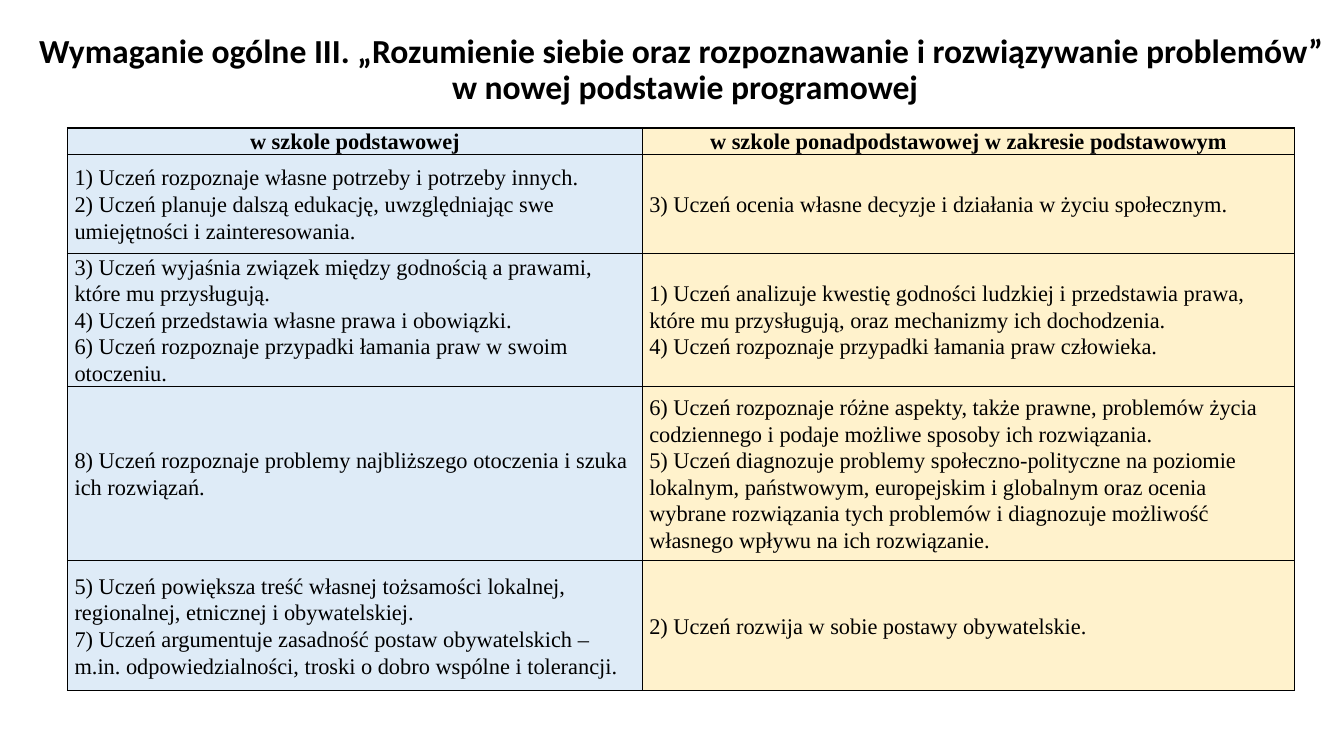
import pptx
import pptx.util
import pptx.dml.color
import pptx.enum.text
import pptx.oxml
import pptx.oxml.ns

Inches, Pt = pptx.util.Inches, pptx.util.Pt
CENTER = pptx.enum.text.PP_ALIGN.CENTER
LEFT = pptx.enum.text.PP_ALIGN.LEFT
MIDDLE = pptx.enum.text.MSO_ANCHOR.MIDDLE

TITLE = (
    "Wymaganie ogólne III. „Rozumienie siebie oraz rozpoznawanie i rozwiązywanie problemów” \v"
    "w nowej podstawie programowej"
)
SCHOOLS = ["w szkole podstawowej", "w szkole ponadpodstawowej w zakresie podstawowym"]
REQUIREMENTS = [
    (
        ["1) Uczeń rozpoznaje własne potrzeby i potrzeby innych.",
         "2) Uczeń planuje dalszą edukację, uwzględniając swe umiejętności i zainteresowania."],
        ["3) Uczeń ocenia własne decyzje i działania w życiu społecznym."],
    ),
    (
        ["3) Uczeń wyjaśnia związek między godnością a prawami, które mu przysługują.",
         "4) Uczeń przedstawia własne prawa i obowiązki.",
         "6) Uczeń rozpoznaje przypadki łamania praw w swoim otoczeniu."],
        ["1) Uczeń analizuje kwestię godności ludzkiej i przedstawia prawa, które mu przysługują, "
         "oraz mechanizmy ich dochodzenia.",
         "4) Uczeń rozpoznaje przypadki łamania praw człowieka."],
    ),
    (
        ["8) Uczeń rozpoznaje problemy najbliższego otoczenia i szuka ich rozwiązań."],
        ["6) Uczeń rozpoznaje różne aspekty, także prawne, problemów życia codziennego "
         "i podaje możliwe sposoby ich rozwiązania.",
         "5) Uczeń diagnozuje problemy społeczno-polityczne na poziomie lokalnym, państwowym, "
         "europejskim i globalnym oraz ocenia wybrane rozwiązania tych problemów "
         "i diagnozuje możliwość własnego wpływu na ich rozwiązanie."],
    ),
    (
        ["5) Uczeń powiększa treść własnej tożsamości lokalnej, regionalnej, etnicznej i obywatelskiej.",
         "7) Uczeń argumentuje zasadność postaw obywatelskich – m.in. odpowiedzialności, "
         "troski o dobro wspólne i tolerancji."],
        ["2) Uczeń rozwija w sobie postawy obywatelskie."],
    ),
]
SCHOOL_FILLS = ["DEEBF7", "FFF2CC"]
SCHOOL_WIDTHS = [5.7, 6.47]
ROW_HEIGHTS = [0.24, 0.98, 1.29, 1.73, 1.29]
BLACK = "000000"


def color(value):
    return pptx.dml.color.RGBColor.from_string(value)


def write(frame, lines, font, size, bold=False, align=LEFT, spacing=1.0):
    frame.word_wrap = True
    for index, line in enumerate(lines):
        paragraph = frame.add_paragraph() if index else frame.paragraphs[0]
        paragraph.text = line
        paragraph.alignment = align
        paragraph.line_spacing = spacing
        paragraph.space_before = paragraph.space_after = Pt(0)
        for run in paragraph.runs:
            run.font.name = font
            run.font.size = Pt(size)
            run.font.bold = bold
            run.font.color.rgb = color(BLACK)


def outline(cell):
    properties = cell._tc.get_or_add_tcPr()
    for side in ("lnL", "lnR", "lnT", "lnB"):
        properties.append(pptx.oxml.parse_xml(
            f'<a:{side} {pptx.oxml.ns.nsdecls("a")} w="{Pt(1)}"><a:solidFill>'
            f'<a:srgbClr val="{BLACK}"/></a:solidFill></a:{side}>'))


def main():
    deck = pptx.Presentation()
    deck.slide_width, deck.slide_height = Inches(13.33), Inches(7.5)
    slide = deck.slides.add_slide(deck.slide_layouts[5])

    title = slide.shapes.title
    title.left, title.top = Inches(0.26), Inches(0.08)
    title.width, title.height = Inches(13.07), Inches(1.24)
    title.text_frame.vertical_anchor = MIDDLE
    title.text_frame.auto_size = pptx.enum.text.MSO_AUTO_SIZE.NONE
    write(title.text_frame, [TITLE], "Calibri", 24, bold=True, align=CENTER, spacing=0.9)

    rows = [tuple([school] for school in SCHOOLS)] + REQUIREMENTS
    comparison = slide.shapes.add_table(
        len(rows), len(SCHOOLS), Inches(0.67), Inches(1.27),
        Inches(sum(SCHOOL_WIDTHS)), Inches(sum(ROW_HEIGHTS))).table
    for column, width in zip(comparison.columns, SCHOOL_WIDTHS):
        column.width = Inches(width)
    for row, height in zip(comparison.rows, ROW_HEIGHTS):
        row.height = Inches(height)

    for r, row in enumerate(rows):
        for c, lines in enumerate(row):
            cell = comparison.cell(r, c)
            outline(cell)
            cell.fill.solid()
            cell.fill.fore_color.rgb = color(SCHOOL_FILLS[c])
            cell.vertical_anchor = MIDDLE
            cell.margin_left = cell.margin_right = Inches(0.07)
            cell.margin_top = cell.margin_bottom = 0
            write(cell.text_frame, lines, "Times New Roman", 16, bold=r == 0,
                  align=LEFT if r else CENTER, spacing=1.07)

    deck.save("out.pptx")


if __name__ == "__main__":
    main()
